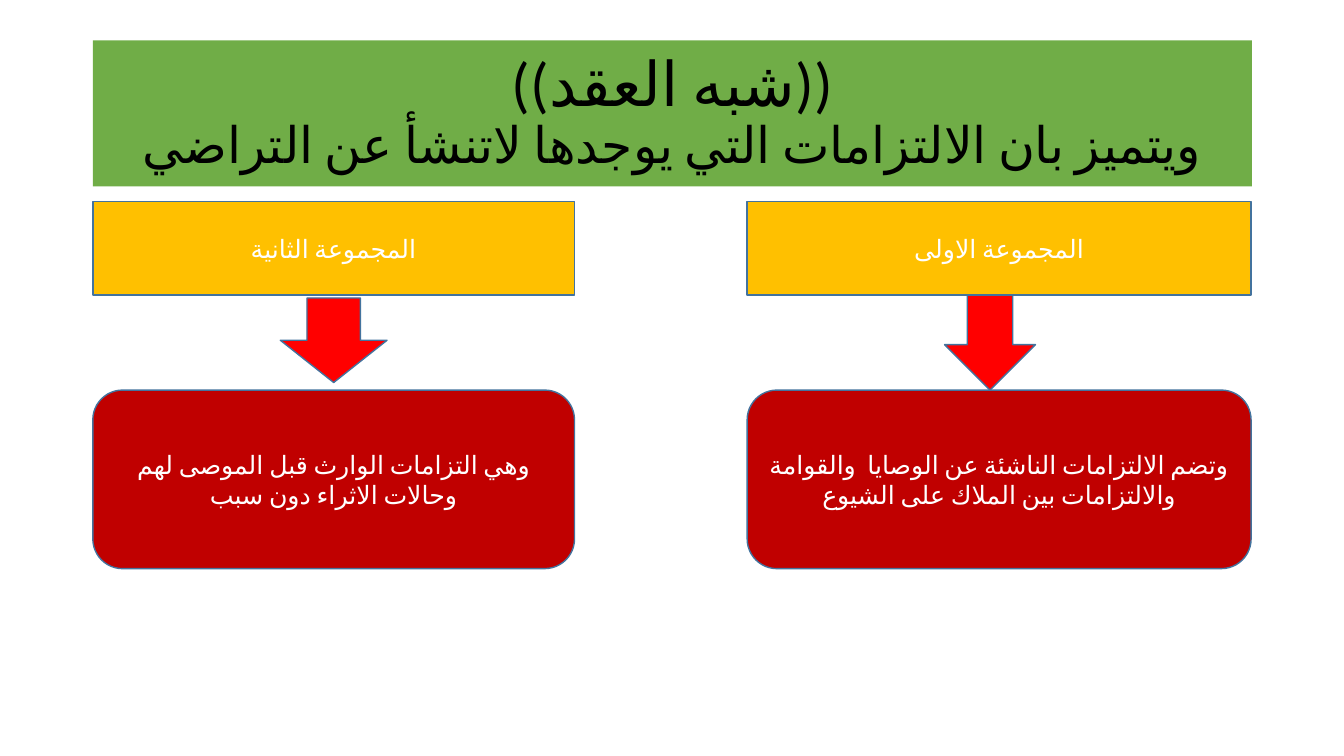
from lxml.etree import SubElement
from pptx import Presentation
from pptx.dml.color import RGBColor
from pptx.enum.shapes import MSO_SHAPE as Preset
from pptx.enum.text import MSO_ANCHOR as Anchor, MSO_AUTO_SIZE as AutoSize, PP_ALIGN as Align
from pptx.oxml.ns import qn
from pptx.util import Cm, Pt

GREEN = RGBColor(0x70, 0xAD, 0x47)
AMBER = RGBColor(0xFF, 0xC0, 0x00)
RED = RGBColor(0xFF, 0x00, 0x00)
DARK_RED = RGBColor(0xC0, 0x00, 0x00)
OUTLINE = RGBColor(0x43, 0x73, 0x9E)
WHITE = RGBColor(0xFF, 0xFF, 0xFF)
BLACK = RGBColor(0x00, 0x00, 0x00)

FONT = "Calibri"
TITLE_LINES = [("((شبه العقد))", 44), ("ويتميز بان الالتزامات التي يوجدها لاتنشأ عن التراضي", 36)]
GROUPS = [
    {
        "box": (18.83, 5.08, 12.7, 9.25),
        "heading": "المجموعة الاولى",
        "body": "وتضم الالتزامات الناشئة عن الوصايا  والقوامة والالتزامات بين الملاك على الشيوع",
        "arrow": {"shift": -0.23, "gap": 0, "width": 2.29, "height": 2.39},
    },
    {
        "box": (2.34, 5.08, 12.14, 9.25),
        "heading": "المجموعة الثانية",
        "body": "وهي التزامات الوارث قبل الموصى لهم وحالات الاثراء دون سبب",
        "arrow": {"shift": 0, "gap": 0.07, "width": 2.69, "height": 2.13},
    },
]
HEADING_HEIGHT = 2.36
BODY_HEIGHT = 4.5


def apply_format(target, values):
    """Set each named attribute of the target."""
    for name, value in values.items():
        setattr(target, name, value)


def add_run(paragraph, text, size, color):
    """Append a formatted Arabic run to the paragraph."""
    run = paragraph.add_run()
    run.text = text
    apply_format(run.font, {"name": FONT, "size": Pt(size)})
    run.font.color.rgb = color
    properties = run._r.get_or_add_rPr()
    properties.set("lang", "ar-IQ")
    SubElement(properties, qn("a:cs")).set("typeface", FONT)


def add_title(slide, box):
    """Place the two-line right-to-left title on its green band."""
    title = slide.shapes.title
    apply_format(title, dict(zip(("left", "top", "width", "height"), map(Cm, box))))
    title.fill.solid()
    title.fill.fore_color.rgb = GREEN
    frame = title.text_frame
    apply_format(frame, {"word_wrap": True, "auto_size": AutoSize.NONE,
                         "vertical_anchor": Anchor.MIDDLE})
    paragraph = frame.paragraphs[0]
    apply_format(paragraph, {"alignment": Align.CENTER, "line_spacing": 0.9})
    paragraph._p.get_or_add_pPr().set("rtl", "1")
    for index, (text, size) in enumerate(TITLE_LINES):
        if index:
            paragraph.add_line_break()
        add_run(paragraph, text, size, BLACK)


def add_block(slide, preset, box, color, text=""):
    """Draw an outlined shape with optional centred white text."""
    shape = slide.shapes.add_shape(preset, *map(Cm, box))
    shape.shadow.inherit = False
    shape.fill.solid()
    shape.fill.fore_color.rgb = color
    shape.line.color.rgb = OUTLINE
    shape.line.width = Pt(1)
    if text:
        apply_format(shape.text_frame, {"word_wrap": True, "vertical_anchor": Anchor.MIDDLE})
        paragraph = shape.text_frame.paragraphs[0]
        paragraph.alignment = Align.CENTER
        add_run(paragraph, text, 18, WHITE)


def add_group(slide, box, heading, body, arrow):
    """Stack a heading, a down arrow and a rounded body in the box."""
    left, top, width, height = box
    arrow_left = left + (width - arrow["width"]) / 2 + arrow["shift"]
    arrow_top = top + HEADING_HEIGHT + arrow["gap"]
    body_top = top + height - BODY_HEIGHT
    add_block(slide, Preset.RECTANGLE, (left, top, width, HEADING_HEIGHT), AMBER, heading)
    add_block(slide, Preset.DOWN_ARROW,
              (arrow_left, arrow_top, arrow["width"], arrow["height"]), RED)
    add_block(slide, Preset.ROUNDED_RECTANGLE,
              (left, body_top, width, BODY_HEIGHT), DARK_RED, body)


def main():
    """Build and save the slide."""
    presentation = Presentation()
    apply_format(presentation, {"slide_width": Cm(33.87), "slide_height": Cm(19.05)})
    slide = presentation.slides.add_slide(presentation.slide_layouts[5])
    add_title(slide, (2.34, 1.02, 29.21, 3.68))
    for group in GROUPS:
        add_group(slide, **group)
    presentation.save("out.pptx")


if __name__ == "__main__":
    main()
